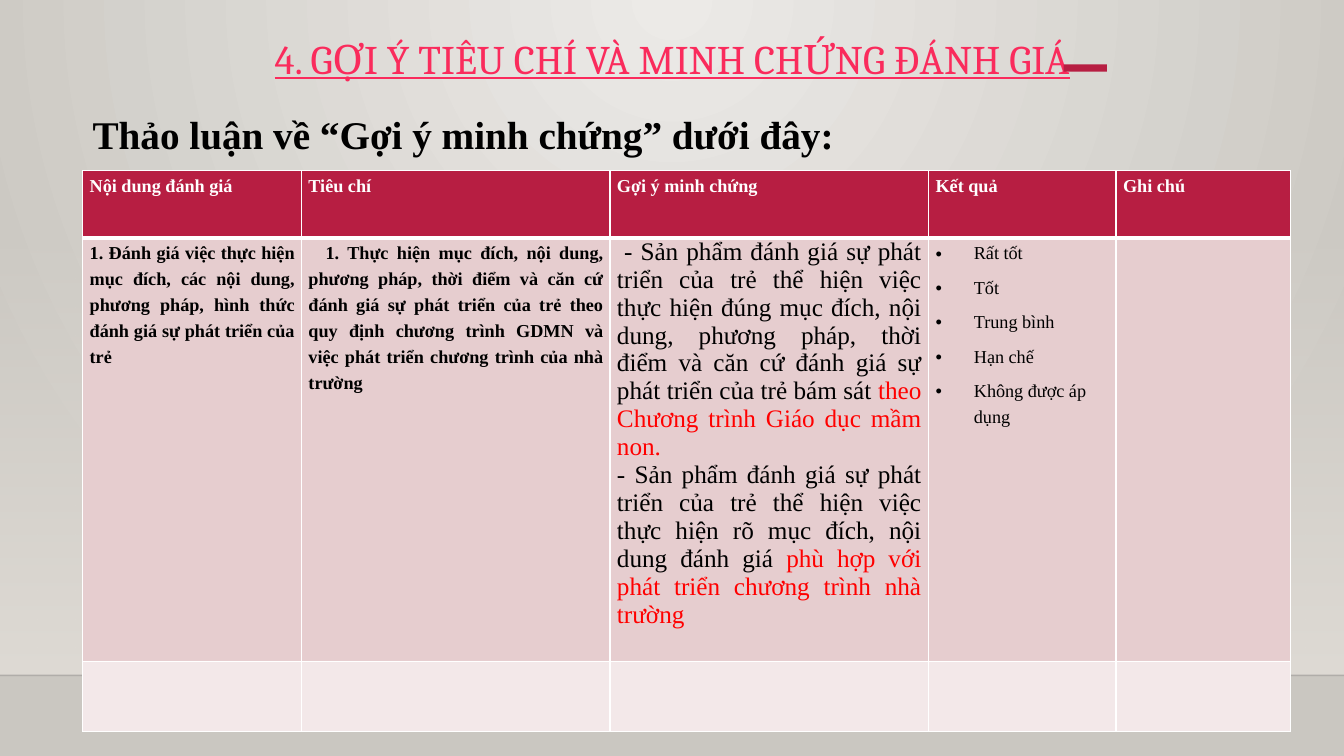
from lxml import etree
from pptx import Presentation
from pptx.dml.color import RGBColor
from pptx.enum.shapes import MSO_CONNECTOR as CONNECTOR, MSO_SHAPE as SHAPE
from pptx.enum.text import MSO_ANCHOR as ANCHOR, PP_ALIGN as ALIGN
from pptx.oxml import parse_xml
from pptx.oxml.ns import nsdecls, qn
from pptx.util import Inches, Pt

COLORS = {
    "glow": "ECEAE7", "edge": "CAC7C1", "wall": "DFDBD5", "floor_line": "000001",
    "title": "FA2B5C", "accent": "B71E42", "text": "000000", "white": "FFFFFF",
    "highlight": "FF0000", "body_row": "E6CDCF", "last_row": "F3E8E9",
}
SERIF = "Times New Roman"
SLIDE_W, SLIDE_H = 13.33, 7.5
COLUMN_WIDTHS = [2.17, 3.06, 3.16, 1.86, 1.73]
ROW_HEIGHTS = [0.67, 4.2, 0.7]
HEADINGS = ["Nội dung đánh giá", "Tiêu chí", "Gợi ý minh chứng", "Kết quả", "Ghi chú"]
CONTENT = ("1. Đánh giá việc thực hiện mục đích, các nội dung, phương pháp, "
           "hình thức đánh giá sự phát triển của trẻ")
CRITERION = ("1. Thực hiện mục đích, nội dung, phương pháp, thời điểm và căn cứ đánh giá "
             "sự phát triển của trẻ theo quy định chương trình GDMN và việc phát triển "
             "chương trình của nhà trường")
EVIDENCE = [
    ("- Sản phẩm đánh giá sự phát triển của trẻ thể hiện việc thực hiện đúng mục đích, "
     "nội dung, phương pháp, thời điểm và căn cứ đánh giá sự phát triển của trẻ bám sát ",
     "theo Chương trình Giáo dục mầm non."),
    ("- Sản phẩm đánh giá sự phát triển của trẻ thể hiện việc thực hiện rõ mục đích, "
     "nội dung đánh giá ",
     "phù hợp với phát triển chương trình nhà trường"),
]
RATINGS = ["Rất tốt", "Tốt", "Trung bình", "Hạn chế", "Không được áp dụng"]


def rgb(name):
    return RGBColor.from_string(COLORS[name])


def gradient(stops, direction):
    """Return a gradient fill element; stops are (percent, colour, opacity percent)."""
    marks = "".join(
        f'<a:gs pos="{pos * 1000}"><a:srgbClr val="{COLORS[color]}">'
        f'<a:alpha val="{alpha * 1000}"/></a:srgbClr></a:gs>'
        for pos, color, alpha in stops)
    return parse_xml(f'<a:gradFill {nsdecls("a")} rotWithShape="1">'
                     f'<a:gsLst>{marks}</a:gsLst>{direction}</a:gradFill>')


def set_fill_element(properties, fill):
    old = properties.find(qn("a:solidFill"))
    properties.replace(old, fill)


def style_run(run, size, color, bold=False, font=SERIF):
    run.font.name, run.font.size, run.font.bold = font, Pt(size), bold
    run.font.color.rgb = rgb(color)


def space_out(paragraph, first):
    paragraph.line_spacing = 1.3
    paragraph.space_before = Pt(0 if first else 3)
    paragraph.space_after = Pt(3)


def indent(paragraph, margin, first_line):
    properties = paragraph._p.get_or_add_pPr()
    properties.set("marL", str(Inches(margin)))
    properties.set("indent", str(Inches(first_line)))
    return properties


def paint_backdrop(slide, floor_top):
    backdrop = slide.background.fill
    backdrop.solid()
    backdrop.fore_color.rgb = rgb("glow")
    circle = ('<a:path path="circle">'
              '<a:fillToRect l="43000" t="0" r="43000" b="100000"/></a:path>')
    set_fill_element(slide._element.cSld.find(qn("p:bg")).find(qn("p:bgPr")),
                     gradient([(0, "glow", 100), (100, "edge", 100)], circle))

    wall_top = 2.21
    wall = slide.shapes.add_shape(SHAPE.RECTANGLE, 0, Inches(wall_top),
                                  Inches(SLIDE_W), Inches(floor_top - wall_top))
    wall.shadow.inherit = False
    wall.line.fill.background()
    wall.fill.solid()
    set_fill_element(wall._element.spPr,
                     gradient([(0, "wall", 0), (100, "wall", 100)],
                              '<a:lin ang="5400000" scaled="0"/>'))

    edge = slide.shapes.add_connector(CONNECTOR.STRAIGHT, 0, Inches(floor_top),
                                      Inches(SLIDE_W), Inches(floor_top))
    edge.line.width = Pt(1)
    edge.line.color.rgb = rgb("floor_line")
    tint = edge._element.spPr.find(".//" + qn("a:srgbClr"))
    etree.SubElement(tint, qn("a:alpha")).set("val", "20000")
    etree.SubElement(edge._element.spPr, qn("a:effectLst"))


def place_title(slide, left, top, width, height):
    title = slide.shapes.title
    title.left, title.top = Inches(left), Inches(top)
    title.width, title.height = Inches(width), Inches(height)
    frame = title.text_frame
    frame.text = "4. GỢI Ý TIÊU CHÍ VÀ MINH CHỨNG ĐÁNH GIÁ"
    frame.word_wrap = True
    frame.vertical_anchor = ANCHOR.MIDDLE
    frame.margin_left = frame.margin_right = Inches(0.13)
    frame.margin_top = frame.margin_bottom = Inches(0.13)
    heading = frame.paragraphs[0]
    heading.alignment, heading.line_spacing = ALIGN.CENTER, 0.9
    style_run(heading.runs[0], 29, "title", font="Cambria")
    heading.runs[0].font.underline = True

    dash = slide.shapes.add_shape(SHAPE.RECTANGLE, Inches(left + 9.36), Inches(top + 0.33),
                                  Inches(0.43), Inches(0.07))
    dash.shadow.inherit = False
    dash.fill.solid()
    dash.fill.fore_color.rgb = rgb("accent")
    dash.line.fill.background()


def place_prompt(slide, left, top, width, height):
    frame = slide.shapes.add_textbox(Inches(left), Inches(top),
                                     Inches(width), Inches(height)).text_frame
    frame.word_wrap = True
    frame.text = "Thảo luận về “Gợi ý minh chứng” dưới đây:"
    prompt = frame.paragraphs[0]
    prompt.alignment = ALIGN.JUSTIFY
    space_out(prompt, first=True)
    style_run(prompt.runs[0], 28, "text", bold=True)


def format_cell(cell, color, top_line, bottom_line):
    cell.margin_left = cell.margin_right = Inches(0.07)
    cell.margin_top = cell.margin_bottom = 0
    properties = cell._tc.get_or_add_tcPr()
    for side, points in (("L", 1), ("R", 1), ("T", top_line), ("B", bottom_line)):
        properties.append(parse_xml(
            f'<a:ln{side} {nsdecls("a")} w="{Pt(points)}"><a:solidFill>'
            f'<a:srgbClr val="{COLORS["white"]}"/></a:solidFill></a:ln{side}>'))
    cell.fill.solid()
    cell.fill.fore_color.rgb = rgb(color)


def write_cell(cell, lines, color, bold, align=ALIGN.LEFT):
    cell.text_frame.text = "\n".join(lines)
    for number, paragraph in enumerate(cell.text_frame.paragraphs):
        paragraph.alignment = align
        space_out(paragraph, first=number == 0)
        style_run(paragraph.runs[0], 13, color, bold)


def write_evidence(cell):
    frame = cell.text_frame
    for number, parts in enumerate(EVIDENCE):
        paragraph = frame.add_paragraph() if number else frame.paragraphs[0]
        paragraph.alignment = ALIGN.JUSTIFY
        for part, color in zip(parts, ("text", "highlight")):
            run = paragraph.add_run()
            run.text = part
            style_run(run, 18, color)
    indent(frame.paragraphs[0], 0, 0.07)


def write_ratings(cell):
    write_cell(cell, RATINGS, "text", bold=False)
    for paragraph in cell.text_frame.paragraphs:
        properties = indent(paragraph, 0.38, -0.38)
        etree.SubElement(properties, qn("a:buFont")).set("typeface", "Arial")
        etree.SubElement(properties, qn("a:buChar")).set("char", "•")


def place_criteria_table(slide, left, top):
    table = slide.shapes.add_table(
        len(ROW_HEIGHTS), len(COLUMN_WIDTHS), Inches(left), Inches(top),
        Inches(sum(COLUMN_WIDTHS)), Inches(sum(ROW_HEIGHTS))).table
    for column, width in zip(table.columns, COLUMN_WIDTHS):
        column.width = Inches(width)
    row_styles = [("accent", 1, 3), ("body_row", 3, 1), ("last_row", 1, 1)]
    for row, height, row_style in zip(table.rows, ROW_HEIGHTS, row_styles):
        row.height = Inches(height)
        for cell in row.cells:
            format_cell(cell, *row_style)

    for column, heading in enumerate(HEADINGS):
        write_cell(table.cell(0, column), [heading], "white", bold=True)
    for column, text in enumerate([CONTENT, CRITERION]):
        write_cell(table.cell(1, column), [text], "text", bold=True, align=ALIGN.JUSTIFY)
    indent(table.cell(1, 1).text_frame.paragraphs[0], 0, 0.17)
    write_evidence(table.cell(1, 2))
    write_ratings(table.cell(1, 3))


def main():
    deck = Presentation()
    deck.slide_width, deck.slide_height = Inches(SLIDE_W), Inches(SLIDE_H)
    slide = deck.slides.add_slide(deck.slide_layouts[5])
    paint_backdrop(slide, floor_top=6.7)
    place_title(slide, 1.19, 0.31, 10.96, 0.59)
    place_prompt(slide, 0.82, 0.91, 11.99, 0.78)
    place_criteria_table(slide, 0.82, 1.69)
    deck.save("out.pptx")


if __name__ == "__main__":
    main()
